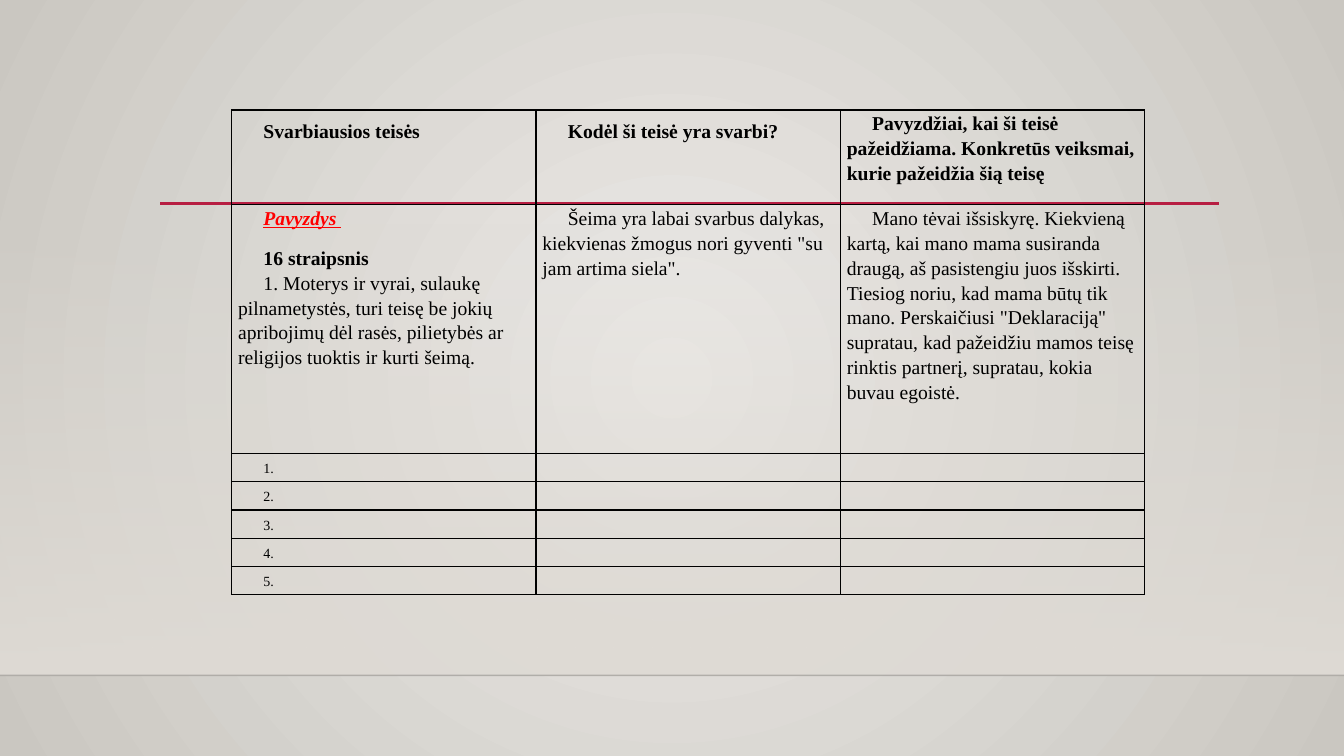
"""Builds a slide with a table of human rights, reasons and examples."""
from lxml.etree import SubElement
from pptx import Presentation
from pptx.dml.color import RGBColor
from pptx.enum.shapes import MSO_CONNECTOR as Connector, MSO_SHAPE as Shape
from pptx.enum.text import PP_ALIGN as Align
from pptx.oxml.ns import qn
from pptx.util import Cm, Pt

BLACK = RGBColor(0x00, 0x00, 0x00)
RED = RGBColor(0xFF, 0x00, 0x00)
CRIMSON = RGBColor(0xB7, 0x1E, 0x42)
LIGHT = RGBColor(0xEC, 0xEA, 0xE7)
GREY = RGBColor(0xCA, 0xC7, 0xC1)
SAND = RGBColor(0xDF, 0xDB, 0xD5)
FLOOR = 17.02


def write(para, text, size=14, color=BLACK, bold=False, accent=False,
          align=Align.LEFT, spacing=1.15, before=0, after=0):
    para.alignment, para.line_spacing = align, spacing
    para.space_before, para.space_after = Pt(before), Pt(after)
    para._p.get_or_add_pPr().set("indent", str(Cm(0.64)))
    if not text:
        SubElement(para._p, qn("a:endParaRPr"), sz=str(size * 100))
        return
    span = para.add_run()
    span.text = text
    font = span.font
    font.name, font.size, font.bold = "Times New Roman", Pt(size), bold
    font.italic = font.underline = accent
    font.color.rgb = color


def add_rule(left, right, height, color, width):
    rule = page.shapes.add_connector(
        Connector.STRAIGHT, Cm(left), Cm(height), Cm(right), Cm(height))
    rule.line.color.rgb, rule.line.width = color, Pt(width)
    SubElement(rule._element.spPr, qn("a:effectLst"))
    return rule


deck = Presentation()
deck.slide_width, deck.slide_height = Cm(33.87), Cm(19.05)
page = deck.slides.add_slide(deck.slide_layouts[6])

backdrop = page.background.fill
backdrop.gradient()
for stop, color in zip(backdrop.gradient_stops, (LIGHT, GREY)):
    stop.color.rgb = color
gradient = page._element.find(".//" + qn("a:gradFill"))
gradient.remove(gradient.find(qn("a:lin")))
circle = SubElement(gradient, qn("a:path"), path="circle")
SubElement(circle, qn("a:fillToRect"), l="50000", t="50000", r="50000", b="50000")

wall = page.shapes.add_shape(Shape.RECTANGLE, 0, Cm(5.61), deck.slide_width, Cm(FLOOR - 5.61))
wall.shadow.inherit = False
wall.line.fill.background()
wall.fill.gradient()
wall.fill.gradient_angle = 270
for stop in wall.fill.gradient_stops:
    stop.color.rgb = SAND
wall_colors = wall._element.spPr.findall(".//" + qn("a:srgbClr"))
SubElement(wall_colors[0], qn("a:alpha"), val="0")

floor_rule = add_rule(0, 33.87, FLOOR, BLACK, 1)
floor_color = floor_rule._element.spPr.find(".//" + qn("a:srgbClr"))
SubElement(floor_color, qn("a:alpha"), val="20000")
add_rule(4.04, 30.73, 5.13, CRIMSON, 2.5)

heading = dict(bold=True, align=Align.JUSTIFY, spacing=1.5)
number = dict(size=10, align=Align.JUSTIFY, spacing=1.5)
rows = [
    [
        [("Svarbiausios teisės", heading)],
        [("Kodėl ši teisė yra svarbi?", heading)],
        [("Pavyzdžiai, kai ši teisė pažeidžiama. Konkretūs veiksmai, "
          "kurie pažeidžia šią teisę", dict(bold=True, after=5))],
    ],
    [
        [("Pavyzdys ", dict(color=RED, bold=True, accent=True, after=5)),
         ("16 straipsnis", dict(bold=True, before=5.7)),
         ("1. Moterys ir vyrai, sulaukę pilnametystės, turi teisę be jokių "
          "apribojimų dėl rasės, pilietybės ar religijos tuoktis ir kurti šeimą.", {})],
        [("Šeima yra labai svarbus dalykas, kiekvienas žmogus nori gyventi "
          "\"su jam artima siela\".", {})],
        [("Mano tėvai išsiskyrę. Kiekvieną kartą, kai mano mama susiranda draugą, "
          "aš pasistengiu juos išskirti. Tiesiog noriu, kad mama būtų tik mano. "
          "Perskaičiusi \"Deklaraciją\" supratau, kad pažeidžiu mamos teisę rinktis "
          "partnerį, supratau, kokia buvau egoistė.", {})],
    ],
]
for index in range(1, 6):
    rows.append([[(f"{index}.", number)], [("", number)], [("", number)]])

heights = [2.39, 6.27] + [0.71] * 5
frame = page.shapes.add_table(
    len(rows), 3, Cm(5.84), Cm(2.77), Cm(3 * 7.67), Cm(sum(heights)))
table = frame.table
table.first_row = table.horz_banding = False
for column in table.columns:
    column.width = Cm(7.67)

for row, height, contents in zip(table.rows, heights, rows):
    row.height = Cm(height)
    for cell, paragraphs in zip(row.cells, contents):
        cell.margin_left = cell.margin_right = Cm(0.16)
        cell.margin_top = cell.margin_bottom = 0
        for side in ("lnL", "lnR", "lnT", "lnB"):
            border = SubElement(cell._tc.get_or_add_tcPr(), qn(f"a:{side}"), w=str(Pt(1)))
            paint = SubElement(border, qn("a:solidFill"))
            SubElement(paint, qn("a:srgbClr"), val=str(BLACK))
        cell.fill.background()
        for position, (text, style) in enumerate(paragraphs):
            box = cell.text_frame
            para = box.add_paragraph() if position else box.paragraphs[0]
            write(para, text, **style)

deck.save("out.pptx")
